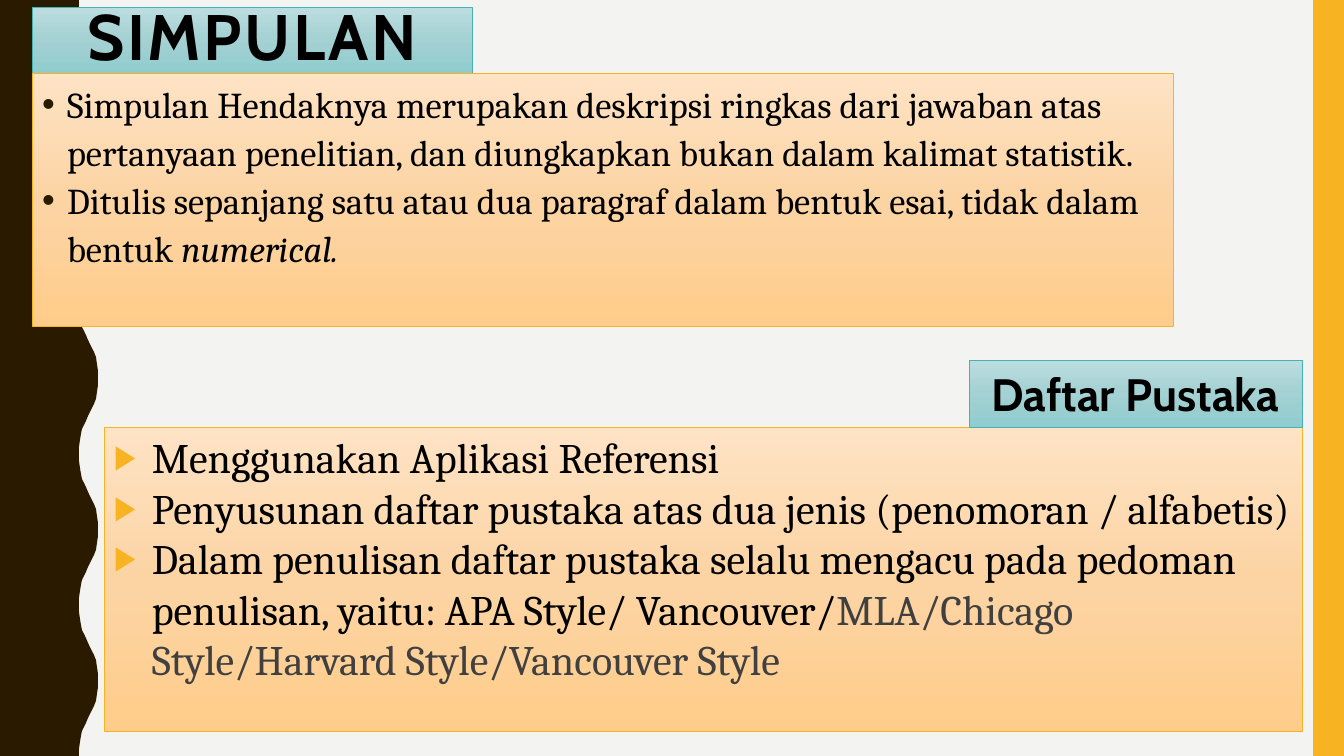
"""Slide on the conclusion and the reference list of a paper."""
from copy import deepcopy

from lxml import etree
from pptx import Presentation
from pptx import util as u
from pptx.dml.color import RGBColor
from pptx.enum import shapes, text
from pptx.oxml.ns import qn

EMU_PER_PX = 914400 / 100.8
SLIDE_W, SLIDE_H = 1344, 756
INK, GREY, BROWN, AMBER = "000000", "404040", "2A1A00", "F8B323"
TEAL_PANEL = (["BCDDDF", "A4D1D3", "90CCCE"], "46B2B5")
PEACH_PANEL = (["FEE3C5", "FCD4A4", "FFCD8B"], AMBER)
WAVE_Y = [0, 7, 14, 20, 25, 29, 33, 38, 42, 46, 50, 55, 62, 69, 76]
WAVE_DEPTH = [0, 0, 1, 2, 3, 5, 7, 9, 11, 13, 15, 17, 18, 19, 19]
WAVE_X, WAVE_COUNT = 79, 5


def px(length):
    """Turn pixels into EMU."""
    return u.Emu(round(length * EMU_PER_PX))


def colour(hex_code):
    """Turn a hex string into a colour."""
    return RGBColor.from_string(hex_code)


def place(part, box):
    """Move a part to its box of left, top, width and height."""
    part.left, part.top, part.width, part.height = map(px, box)


def add_rect(slide, box):
    """Add a rectangle in the given box."""
    return slide.shapes.add_shape(shapes.MSO_SHAPE.RECTANGLE, *map(px, box))


def paint_flat(part, hex_code):
    """Give a part one flat colour, with neither line nor shadow."""
    part.shadow.inherit = False
    part.fill.solid()
    part.fill.fore_color.rgb = colour(hex_code)
    part.line.fill.background()


def paint_panel(panel, look):
    """Give a panel its downward gradient and thin outline."""
    tints, outline = look
    panel.shadow.inherit = False
    panel.fill.gradient()
    panel.fill.gradient_angle = 270
    first = panel.fill.gradient_stops[0]
    stop_list = panel._element.spPr.find(".//" + qn("a:gsLst"))
    stop_list.insert(1, deepcopy(stop_list[0]))
    for stop, tint, position in zip(panel.fill.gradient_stops, tints, (0, 0.5, 1)):
        stop.color.rgb = colour(tint)
        stop.position = position
    panel.line.color.rgb = colour(outline)
    panel.line.width = u.Pt(0.5)


def add_run(paragraph, words, font, size, ink=INK, bold=False, italic=False):
    """Add one formatted run and return it."""
    run = paragraph.add_run()
    run.text = words
    run.font.name, run.font.size = font, u.Pt(size)
    run.font.bold, run.font.italic = bold, italic
    run.font.color.rgb = colour(ink)
    return run


def set_bullet(paragraph, sign, hex_code, percent, indent):
    """Give a paragraph a coloured bullet and a hanging indent."""
    props = paragraph._p.get_or_add_pPr()
    props.set("marL", str(px(indent)))
    props.set("indent", str(-px(indent)))
    tint = etree.SubElement(props, qn("a:buClr"))
    etree.SubElement(tint, qn("a:srgbClr"), val=hex_code)
    etree.SubElement(props, qn("a:buSzPct"), val=str(percent * 1000))
    etree.SubElement(props, qn("a:buFont"), typeface="Arial")
    etree.SubElement(props, qn("a:buChar"), char=sign)


def fill_heading(heading, box, words, size, line_spacing=1.0):
    """Fill a teal heading and return its run."""
    place(heading, box)
    paint_panel(heading, TEAL_PANEL)
    frame = heading.text_frame
    frame.word_wrap = True
    frame.auto_size = text.MSO_AUTO_SIZE.NONE
    frame.vertical_anchor = text.MSO_ANCHOR.MIDDLE
    paragraph = frame.paragraphs[0]
    paragraph.alignment = text.PP_ALIGN.CENTER
    paragraph.line_spacing = line_spacing
    return add_run(paragraph, words, "Cabin", size, bold=True)


def fill_list(panel, box, items, size, line_spacing, bullet):
    """Fill a peach panel with bulleted items, each a list of runs."""
    place(panel, box)
    paint_panel(panel, PEACH_PANEL)
    frame = panel.text_frame
    frame.word_wrap = True
    frame.auto_size = text.MSO_AUTO_SIZE.NONE
    frame.vertical_anchor = text.MSO_ANCHOR.TOP
    for index, item in enumerate(items):
        paragraph = frame.add_paragraph() if index else frame.paragraphs[0]
        paragraph.alignment = text.PP_ALIGN.LEFT
        paragraph.line_spacing = line_spacing
        paragraph.space_before = paragraph.space_after = u.Pt(0)
        set_bullet(paragraph, *bullet)
        for words, style in item:
            add_run(paragraph, words, "Cambria", size, **style)


def add_backdrop(slide):
    """Lay the wavy left edge and the right bar behind everything."""
    slide.background.fill.solid()
    slide.background.fill.fore_color.rgb = colour("F3F3F2")
    period = SLIDE_H / WAVE_COUNT
    half = list(zip(WAVE_DEPTH, WAVE_Y))
    crest = half + [(depth, period - y) for depth, y in reversed(half[:-1])]
    edge = [(WAVE_X + depth, round(wave * period + y))
            for wave in range(WAVE_COUNT) for depth, y in crest]
    builder = slide.shapes.build_freeform(0, 0, scale=EMU_PER_PX)
    builder.add_line_segments(edge + [(0, SLIDE_H)], close=True)
    wavy_edge = builder.convert_to_shape()
    paint_flat(wavy_edge, BROWN)
    right_bar = add_rect(slide, (1313, 0, 31, SLIDE_H))
    paint_flat(right_bar, AMBER)
    for part in (right_bar, wavy_edge):
        slide.shapes._spTree.insert(2, part._element)


def add_conclusion(slide, left, top):
    """Fill the title and body placeholders with the conclusion."""
    title = fill_heading(slide.shapes.title, (left, top, 440, 66), "SIMPULAN", 45.9, 0.9)
    title.font._element.set("spc", "200")
    items = [
        [("Simpulan Hendaknya merupakan deskripsi ringkas dari jawaban atas "
          "pertanyaan penelitian, dan diungkapkan bukan dalam kalimat statistik.", {})],
        [("Ditulis sepanjang satu atau dua paragraf dalam bentuk esai, "
          "tidak dalam bentuk ", {}),
         ("numerical.", {"italic": True})],
    ]
    fill_list(slide.placeholders[1], (left, top + 66, 1141, 253), items, 26, 1.1,
              ("•", BROWN, 100, 25))


def add_references(slide, left, top, width):
    """Add the reference list with its heading flush right above it."""
    items = [
        [("Menggunakan Aplikasi Referensi", {})],
        [("Penyusunan daftar pustaka atas dua jenis (penomoran / alfabetis)", {})],
        [("Dalam penulisan daftar pustaka selalu mengacu pada pedoman "
          "penulisan, yaitu: APA Style/ Vancouver/", {}),
         ("MLA/Chicago Style/Harvard Style/Vancouver Style", {"ink": GREY})],
    ]
    list_box = (left, top + 67, width, 304)
    fill_list(add_rect(slide, list_box), list_box, items, 30, 1.0,
              ("▶", AMBER, 80, 38))
    heading_box = (left + width - 333, top, 333, 67)
    fill_heading(add_rect(slide, heading_box), heading_box, "Daftar Pustaka", 32.4)


def main():
    """Build the slide and save it."""
    deck = Presentation()
    deck.slide_width, deck.slide_height = px(SLIDE_W), px(SLIDE_H)
    slide = deck.slides.add_slide(deck.slide_layouts[1])
    add_backdrop(slide)
    add_conclusion(slide, 32, 7)
    add_references(slide, 104, 360, 1198)
    deck.save("out.pptx")


if __name__ == "__main__":
    main()
